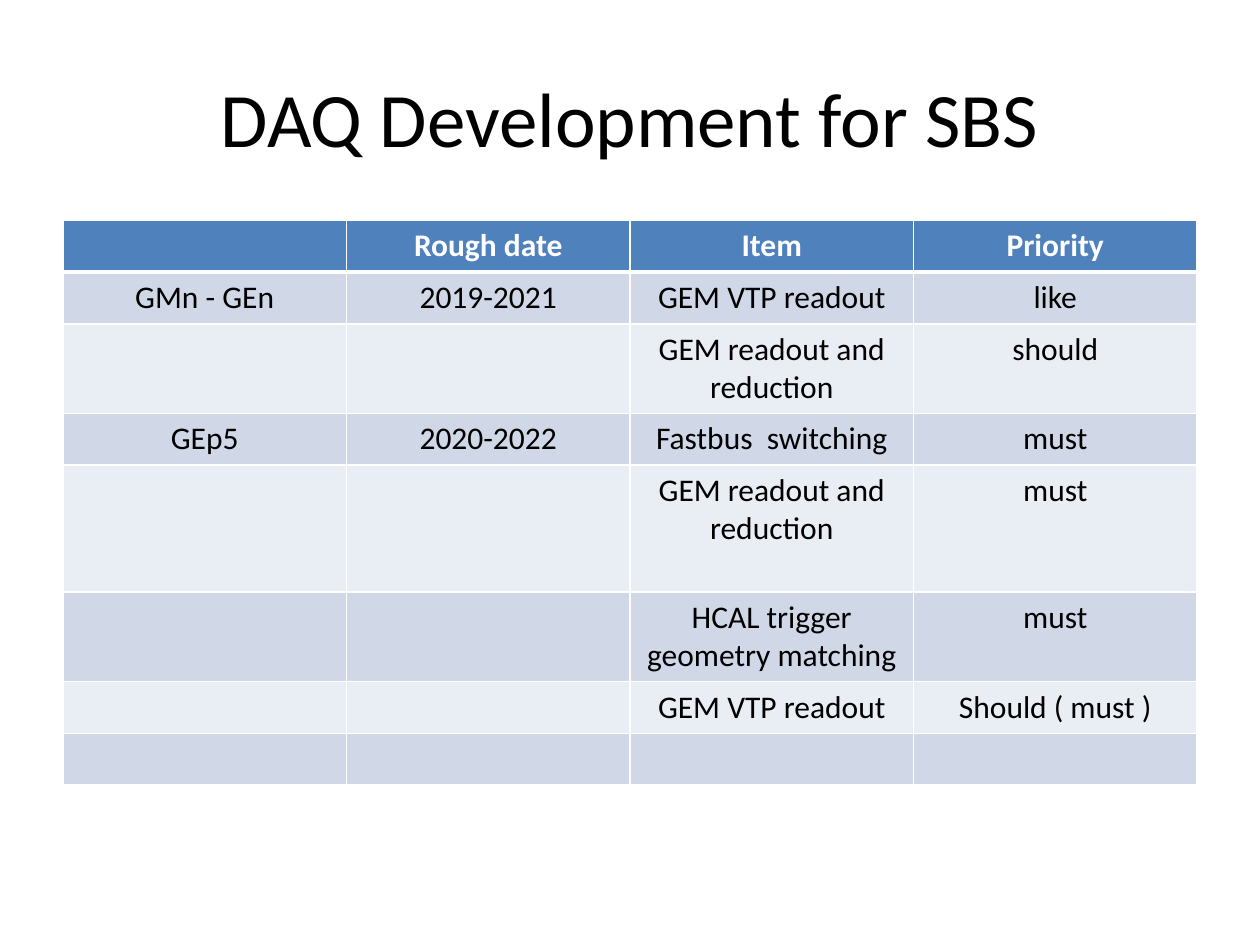
from dataclasses import dataclass

from lxml import etree
from pptx import Presentation
from pptx.dml.color import RGBColor
from pptx.enum.text import MSO_ANCHOR, PP_ALIGN
from pptx.oxml.ns import qn
from pptx.util import Inches, Pt

CENTER = PP_ALIGN.CENTER
MIDDLE = MSO_ANCHOR.MIDDLE
TITLE_ONLY = 5


@dataclass(frozen=True)
class Theme:
    font: str = "Calibri"
    title_size: int = 44
    body_size: int = 18
    text: str = "000000"
    header_text: str = "FFFFFF"
    header_fill: str = "4F81BD"
    bands: tuple = ("D0D8E8", "E9EDF4")
    rule: str = "FFFFFF"
    thin: int = 1
    thick: int = 3


THEME = Theme()
SLIDE_W, SLIDE_H = 10, 7.5
MARGIN = 0.05 * SLIDE_W
CONTENT_W = SLIDE_W - 2 * MARGIN
TITLE_BOX = (MARGIN, 0.04 * SLIDE_H, CONTENT_W, 1.25)
TABLE_BOX = (MARGIN, 1.75, CONTENT_W)
LINE_H, ROW_PAD = 0.3, 0.11

HEADER = ("", "Rough date", "Item", "Priority")
# Each row: height in text lines, then its cells
ROWS = (
    (1, ("GMn - GEn", "2019-2021", "GEM VTP readout", "like")),
    (2, ("", "", "GEM readout and reduction", "should")),
    (1, ("GEp5", "2020-2022", "Fastbus  switching", "must")),
    (3, ("", "", "GEM readout and reduction", "must")),
    (2, ("", "", "HCAL trigger geometry matching", "must")),
    (1, ("", "", "GEM VTP readout", "Should ( must )")),
    (1, ("", "", "", "")),
)


def write(tf, text, size, color, bold=False):
    p = tf.paragraphs[0]
    p.alignment = CENTER
    p.font.size = Pt(size)
    if text:
        r = p.add_run()
        r.text = text
        r.font.name = THEME.font
        r.font.size = Pt(size)
        r.font.bold = bold
        r.font.color.rgb = RGBColor.from_string(color)


def set_borders(cell, top, bottom):
    tc_pr = cell._tc.get_or_add_tcPr()
    widths = {"lnL": THEME.thin, "lnR": THEME.thin, "lnT": top, "lnB": bottom}
    for tag, width in widths.items():
        ln = etree.SubElement(tc_pr, qn(f"a:{tag}"), w=str(Pt(width)))
        fill = etree.SubElement(ln, qn("a:solidFill"))
        etree.SubElement(fill, qn("a:srgbClr"), val=THEME.rule)


def add_title(s, box, text):
    sp = s.shapes.title
    sp.left, sp.top, sp.width, sp.height = map(Inches, box)
    sp.text_frame.vertical_anchor = MIDDLE
    write(sp.text_frame, text, THEME.title_size, THEME.text)


def add_priority_table(s, box):
    left, top, width = box
    rows = ((1, HEADER),) + ROWS
    heights = [ROW_PAD + LINE_H * lines for lines, _ in rows]
    frame = s.shapes.add_table(len(rows), len(HEADER), Inches(left), Inches(top),
                               Inches(width), Inches(sum(heights)))
    table = frame.table
    for column in table.columns:
        column.width = Inches(width / len(HEADER))
    for i, (_, texts) in enumerate(rows):
        table.rows[i].height = Inches(heights[i])
        is_header = i == 0
        fill = THEME.header_fill if is_header else THEME.bands[(i - 1) % 2]
        color = THEME.header_text if is_header else THEME.text
        above = THEME.thick if i == 1 else THEME.thin
        below = THEME.thick if is_header else THEME.thin
        for cell, text in zip(table.rows[i].cells, texts):
            set_borders(cell, above, below)
            cell.fill.solid()
            cell.fill.fore_color.rgb = RGBColor.from_string(fill)
            write(cell.text_frame, text, THEME.body_size, color, is_header)


def main():
    prs = Presentation()
    prs.slide_width, prs.slide_height = Inches(SLIDE_W), Inches(SLIDE_H)
    s = prs.slides.add_slide(prs.slide_layouts[TITLE_ONLY])
    add_title(s, TITLE_BOX, "DAQ Development for SBS")
    add_priority_table(s, TABLE_BOX)
    prs.save("out.pptx")


if __name__ == "__main__":
    main()
